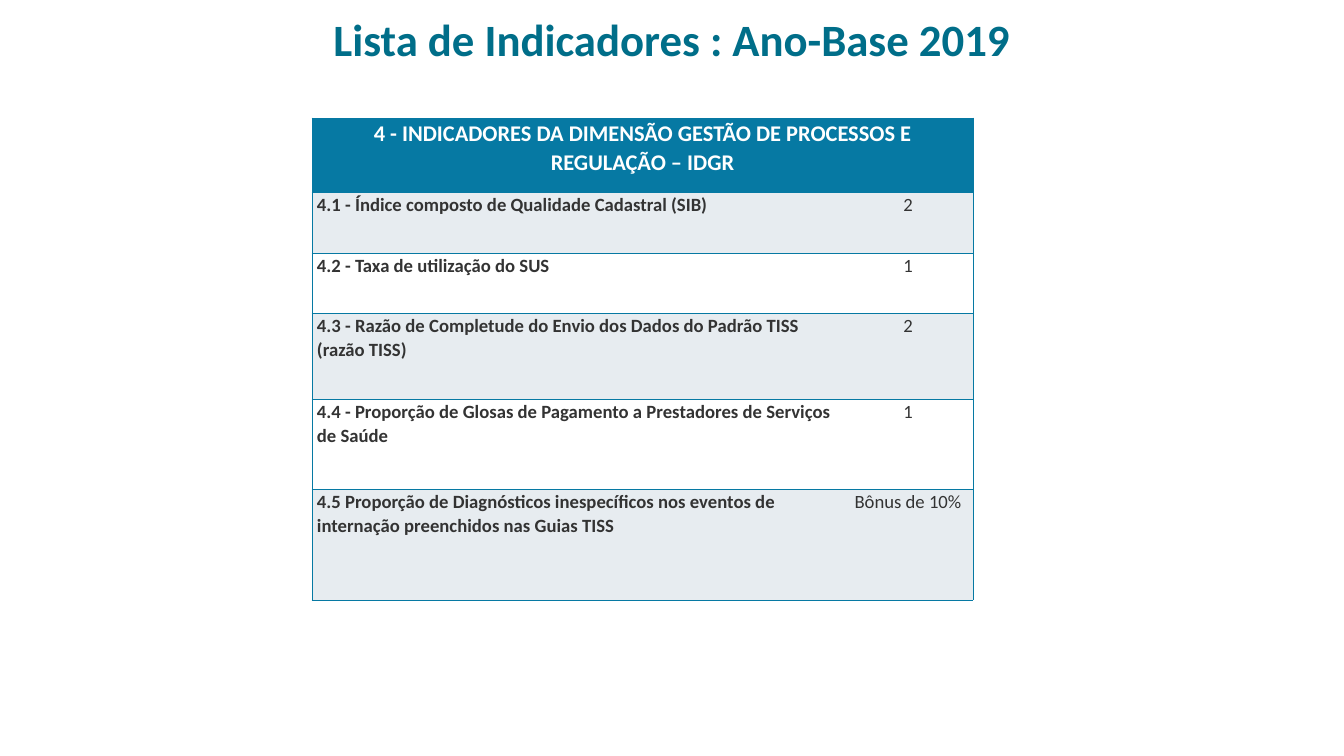
"""Builds the slide listing the IDGR indicators for base year 2019."""
import pptx
import pptx.dml.color
import pptx.enum.text
import pptx.oxml
import pptx.oxml.ns
import pptx.util

RGB = pptx.dml.color.RGBColor.from_string
ALIGN = pptx.enum.text.PP_ALIGN
TOP = pptx.enum.text.MSO_ANCHOR.TOP
PX = 914400 / 67.2

THEME = {
    "font": "Calibri",
    "title": "006E89", "accent": "0679A3", "text": "333333",
    "white": "FFFFFF", "band": "E7ECF0",
    "title_size": 48, "header_size": 24, "body_size": 20, "border": 1,
}

HEADER = "4 - INDICADORES DA DIMENSÃO GESTÃO DE PROCESSOS E REGULAÇÃO – IDGR"
INDICATORS = [
    ("4.1 - Índice composto de Qualidade Cadastral (SIB)", "2", 61),
    ("4.2 - Taxa de utilização do SUS", "1", 60),
    ("4.3 - Razão de Completude do Envio dos Dados do Padrão TISS (razão TISS)", "2", 86),
    ("4.4 - Proporção de Glosas de Pagamento a Prestadores de Serviços de Saúde", "1", 90),
    ("4.5 Proporção de Diagnósticos inespecíficos nos eventos de internação "
     "preenchidos nas Guias TISS", "Bônus de 10%", 111),
]
HEADER_HEIGHT = 74
COLUMNS = [531, 130]


def px(n):
    return pptx.util.Emu(round(n * PX))


def fill_cell(cell, text, fill, color, size, bold, align, sides):
    cell.margin_left = cell.margin_right = px(5)
    cell.margin_top = cell.margin_bottom = 0
    cell.vertical_anchor = TOP
    cell.fill.solid()
    cell.fill.fore_color.rgb = RGB(THEME[fill])
    p = cell.text_frame.paragraphs[0]
    p.text = text
    p.alignment = align
    p.line_spacing = 1.07
    p.font.name = THEME["font"]
    p.font.size = pptx.util.Pt(THEME[size])
    p.font.bold = bold
    p.font.color.rgb = RGB(THEME[color])
    solid = f'<a:solidFill><a:srgbClr val="{THEME["accent"]}"/></a:solidFill>'
    for i, side in enumerate("LRTB"):
        paint = solid if side in sides else "<a:noFill/>"
        line = pptx.oxml.parse_xml(
            f'<a:ln{side} {pptx.oxml.ns.nsdecls("a")} '
            f'w="{pptx.util.Pt(THEME["border"])}">{paint}</a:ln{side}>')
        cell._tc.get_or_add_tcPr().insert(i, line)


prs = pptx.Presentation()
prs.slide_width, prs.slide_height = px(1344), px(756)
s = prs.slides.add_slide(prs.slide_layouts[5])

title = s.shapes.title
title.left, title.top, title.width, title.height = px(0), px(7), px(1344), px(58)
tf = title.text_frame
tf.auto_size = pptx.enum.text.MSO_AUTO_SIZE.NONE
tf.word_wrap = True
tf.vertical_anchor = TOP
tf.margin_left = tf.margin_right = px(10)
tf.margin_top = tf.margin_bottom = px(5)
p = tf.paragraphs[0]
p.text = "Lista de Indicadores : Ano-Base 2019"
p.alignment = ALIGN.CENTER
p.font.name = THEME["font"]
p.font.size = pptx.util.Pt(THEME["title_size"])
p.font.bold = True
p.font.color.rgb = RGB(THEME["title"])

heights = [HEADER_HEIGHT] + [height for _, _, height in INDICATORS]
table = s.shapes.add_table(len(heights), len(COLUMNS), px(312), px(118),
                           px(sum(COLUMNS)), px(sum(heights))).table
for column, width in zip(table.columns, COLUMNS):
    column.width = px(width)
for row, height in zip(table.rows, heights):
    row.height = px(height)

table.cell(0, 0).merge(table.cell(0, 1))
fill_cell(table.cell(0, 0), HEADER, "accent", "white", "header_size", True,
          ALIGN.CENTER, "LRTB")
for i, (name, weight, _) in enumerate(INDICATORS, 1):
    fill = "band" if i % 2 else "white"
    fill_cell(table.cell(i, 0), name, fill, "text", "body_size", True, ALIGN.LEFT, "LTB")
    fill_cell(table.cell(i, 1), weight, fill, "text", "body_size", False, ALIGN.CENTER, "RTB")

prs.save("out.pptx")
